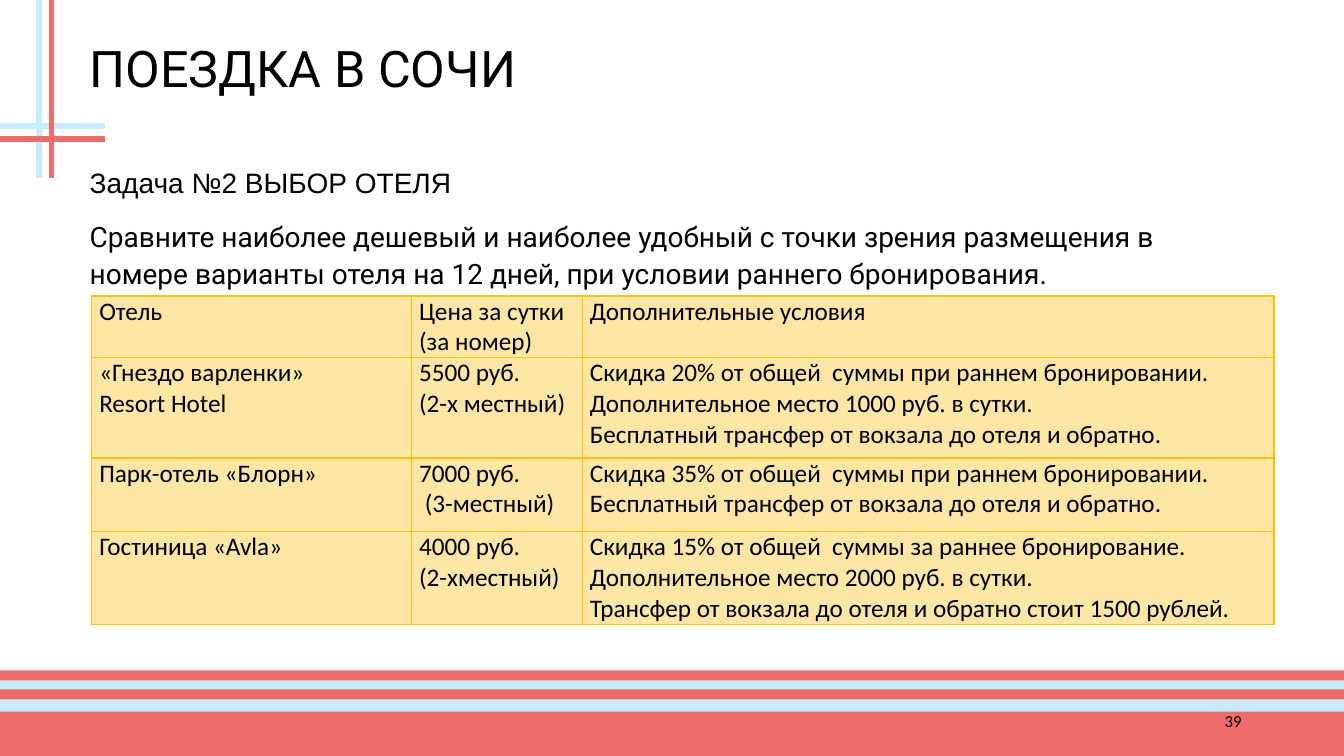
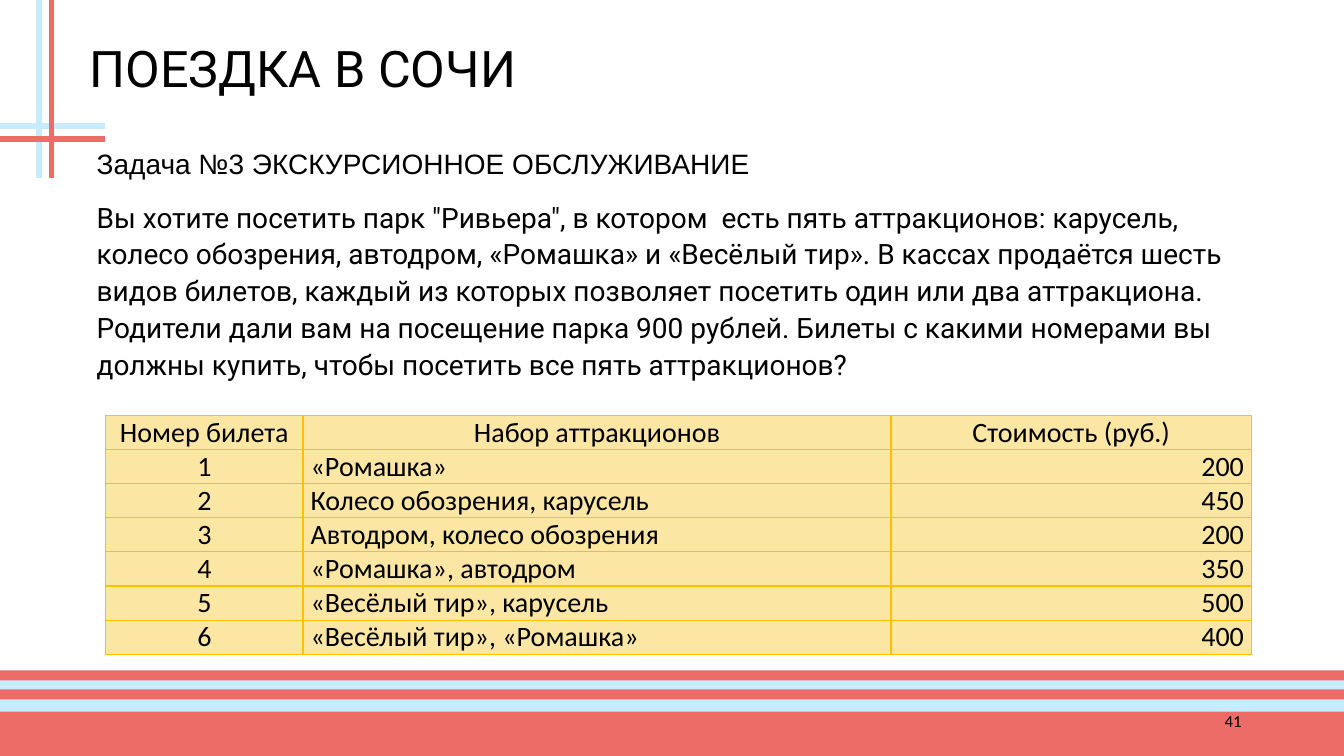
from dataclasses import dataclass

from lxml import etree
from pptx import Presentation, util as u
from pptx.dml.color import RGBColor
from pptx.enum import shapes, text
from pptx.oxml import ns

Pt = u.Pt
LEFT, CENTER, RIGHT = text.PP_ALIGN.LEFT, text.PP_ALIGN.CENTER, text.PP_ALIGN.RIGHT


@dataclass(frozen=True)
class Theme:
    red: str = "EE6C68"
    blue: str = "C6ECFD"
    ink: str = "000000"
    cell: str = "FCE6A3"
    border: str = "FFC000"
    heading_font: str = "Roboto"
    task_font: str = "Arial"
    table_font: str = "Calibri"
    title_size: int = 36
    body_size: int = 20
    number_size: int = 12


T = Theme()
W, H = 960, 540
TITLE = "ПОЕЗДКА В СОЧИ"


# Text
def add_run(p, content, font, size):
    r = p.add_run()
    r.text = content
    r.font.name, r.font.size = font, Pt(size)
    r.font.color.rgb = RGBColor.from_string(T.ink)


def add_text(s, box, paragraphs, size, spacing=1.0, align=LEFT,
             anchor=text.MSO_ANCHOR.TOP):
    """Add a text box; paragraphs are (text, font, space after)."""
    tf = s.shapes.add_textbox(*map(Pt, box)).text_frame
    tf.word_wrap = True
    tf.vertical_anchor = anchor
    for i, (content, font, after) in enumerate(paragraphs):
        p = tf.add_paragraph() if i else tf.paragraphs[0]
        p.alignment, p.line_spacing, p.space_after = align, spacing, Pt(after)
        add_run(p, content, font, size)


# Decoration
def add_band(s, top, height, color):
    sp = s.shapes.add_shape(shapes.MSO_SHAPE.RECTANGLE, 0, Pt(top), Pt(W), Pt(height))
    sp.shadow.inherit = False
    sp.fill.solid()
    sp.fill.fore_color.rgb = RGBColor.from_string(color)
    sp.line.fill.background()


def add_line(s, x1, y1, x2, y2, color):
    ln = s.shapes.add_connector(shapes.MSO_CONNECTOR.STRAIGHT, *map(Pt, (x1, y1, x2, y2)))
    ln.line.width = Pt(4)
    ln.line.color.rgb = RGBColor.from_string(color)
    etree.SubElement(ln._element.spPr, ns.qn("a:effectLst"))


def add_base_slide(prs, number):
    """Add a slide with bands, crossed lines, number and title."""
    s = prs.slides.add_slide(prs.slide_layouts[6])
    for top, height, color in ((479.5, 60.5, T.blue), (508.3, 31.7, T.red),
                               (492.5, 7.2, T.red), (478.8, 7.2, T.red)):
        add_band(s, top, height, color)
    for x, y, color in ((28, 90, T.blue), (36.7, 99.4, T.red)):
        add_line(s, 0, y, 75, y, color)
        add_line(s, x, 0, x, 127.5, color)
    add_text(s, (678, 500.4, 216, 28.8), [(str(number), T.table_font, 0)],
             T.number_size, align=RIGHT, anchor=text.MSO_ANCHOR.MIDDLE)
    add_text(s, (57, 28, 837.4, 52.6), [(TITLE, T.heading_font, 0)],
             T.title_size, spacing=0.9)
    return s


def add_task(s, left, top, heading, *body):
    paragraphs = [(heading, T.task_font, 12)]
    paragraphs += [(content, T.heading_font, 0) for content in body]
    add_text(s, (left, top, 837.4, 332), paragraphs, T.body_size, spacing=1.1)


# Tables
def style_cell(cell):
    cell.margin_left = cell.margin_right = Pt(5.4)
    cell.margin_top = cell.margin_bottom = 0
    tc_pr = cell._tc.get_or_add_tcPr()
    for side in ("lnL", "lnR", "lnT", "lnB"):
        ln = etree.SubElement(tc_pr, ns.qn(f"a:{side}"), w=str(Pt(1)))
        fill = etree.SubElement(ln, ns.qn("a:solidFill"))
        etree.SubElement(fill, ns.qn("a:srgbClr"), val=T.border)
    cell.fill.solid()
    cell.fill.fore_color.rgb = RGBColor.from_string(T.cell)


def add_table(s, left, top, widths, heights, rows, size, header_align, aligns):
    table = s.shapes.add_table(len(rows), len(widths), Pt(left), Pt(top),
                               Pt(sum(widths)), Pt(sum(heights))).table
    table.first_row = table.horz_banding = False
    for column, width in zip(table.columns, widths):
        column.width = Pt(width)
    for i, (row, height) in enumerate(zip(rows, heights)):
        table.rows[i].height = Pt(height)
        for j, content in enumerate(row):
            cell = table.cell(i, j)
            style_cell(cell)
            tf = cell.text_frame
            for k, line in enumerate(content.split("\n")):
                p = tf.add_paragraph() if k else tf.paragraphs[0]
                p.alignment = aligns[j] if i else header_align
                add_run(p, line, T.table_font, size)


# Slides
def add_hotel_slide(prs):
    s = add_base_slide(prs, 39)
    add_task(s, 57, 112.3, "Задача №2 ВЫБОР ОТЕЛЯ",
             "Сравните наиболее дешевый и наиболее удобный c точки зрения размещения "
             "в номере варианты отеля на 12 дней, при условии раннего бронирования.")
    rows = [
        ("Отель", "Цена за сутки\n(за номер)", "Дополнительные условия"),
        ("«Гнездо варленки»\nResort Hotel", "5500 руб.\n(2-х местный)",
         "Скидка 20% от общей  суммы при раннем бронировании.\n"
         "Дополнительное место 1000 руб. в сутки.\n"
         "Бесплатный трансфер от вокзала до отеля и обратно."),
        ("Парк-отель «Блорн»", "7000 руб.\n (3-местный)",
         "Скидка 35% от общей  суммы при раннем бронировании. "
         "Бесплатный трансфер от вокзала до отеля и обратно."),
        ("Гостиница «Avla»", "4000 руб.\n(2-хместный)",
         "Скидка 15% от общей  суммы за раннее бронирование.\n"
         "Дополнительное место 2000 руб. в сутки.\n"
         "Трансфер от вокзала до отеля и обратно стоит 1500 рублей."),
    ]
    add_table(s, 65.5, 211.5, (228.5, 122, 494), (44, 71.7, 52.7, 66), rows, 18,
              LEFT, (LEFT, LEFT, LEFT))


def add_ticket_slide(prs):
    s = add_base_slide(prs, 41)
    add_task(s, 62, 98.6, "Задача №3 ЭКСКУРСИОННОЕ ОБСЛУЖИВАНИЕ",
             "Вы хотите посетить парк \"Ривьера\", в котором  есть пять аттракционов: "
             "карусель, колесо обозрения, автодром, «Ромашка» и «Весёлый тир». "
             "В кассах продаётся шесть видов билетов, каждый из которых позволяет "
             "посетить один или два аттракциона.",
             "Родители дали вам на посещение парка 900 рублей. Билеты с какими номерами "
             "вы должны купить, чтобы посетить все пять аттракционов?")
    tickets = [("«Ромашка»", 200), ("Колесо обозрения, карусель", 450),
               ("Автодром, колесо обозрения", 200), ("«Ромашка», автодром", 350),
               ("«Весёлый тир», карусель", 500), ("«Весёлый тир», «Ромашка»", 400)]
    rows = [("Номер билета", "Набор аттракционов", "Стоимость (руб.)")]
    rows += [(str(n), rides, str(price)) for n, (rides, price) in enumerate(tickets, 1)]
    add_table(s, 75.5, 296.7, (141, 420, 257.5), [24.4] * len(rows), rows, 20,
              CENTER, (CENTER, LEFT, RIGHT))


def main():
    prs = Presentation()
    prs.slide_width, prs.slide_height = Pt(W), Pt(H)
    add_hotel_slide(prs)
    add_ticket_slide(prs)
    prs.save("out.pptx")


if __name__ == "__main__":
    main()
